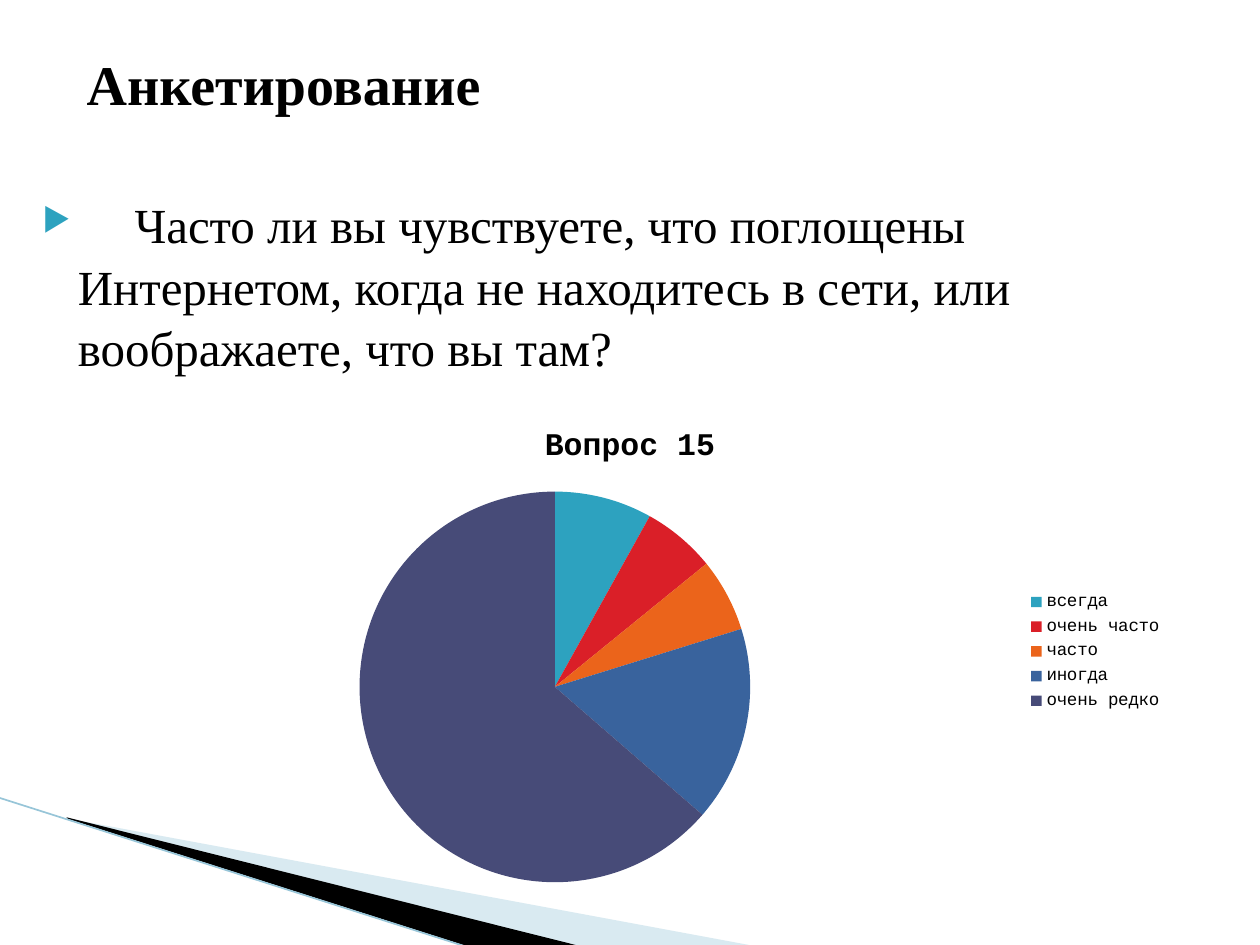
from dataclasses import dataclass

from lxml.etree import SubElement
from pptx import Presentation
from pptx.chart.data import CategoryChartData
from pptx.dml.color import RGBColor
from pptx.enum.chart import XL_CHART_TYPE as ChartType, XL_LEGEND_POSITION as LegendPosition
from pptx.enum.shapes import MSO_CONNECTOR as Connector
from pptx.enum.text import MSO_ANCHOR as Anchor
from pptx.oxml.ns import qn
from pptx.util import Pt

COLORS = {
    "text": "000000",
    "pale": "A0CBDC",
    "edge": "97C5D8",
    "teal": "2DA2BF",
    "red": "DA1F28",
    "orange": "EB641B",
    "blue": "39639D",
    "indigo": "474B78",
}
SERIF, MONO = "Times New Roman", "Courier New"


@dataclass
class Wedge:
    points: list[tuple[float, float]]
    color: str
    opacity: int = 100


@dataclass
class Slice:
    label: str
    value: int
    color: str


WEDGES = [
    Wedge([(39.6, 468.4), (428.4, 540.4), (328.3, 540.4), (39.6, 468)], "pale", 40),
    Wedge([(38.2, 467.3), (329, 540.4), (267.8, 541.4), (38.9, 468)], "text"),
]
SLICES = [
    Slice("всегда", 8, "teal"),
    Slice("очень часто", 6, "red"),
    Slice("часто", 6, "orange"),
    Slice("иногда", 16, "blue"),
    Slice("очень редко", 63, "indigo"),
]


def rgb(name: str) -> RGBColor:
    return RGBColor.from_string(COLORS[name])


def set_font(font, name: str, size: float, bold: bool = False) -> None:
    font.name, font.size, font.bold = name, Pt(size), bold
    font.color.rgb = rgb("text")


def draw_wedge(page, wedge: Wedge) -> None:
    start, *rest = wedge.points
    builder = page.shapes.build_freeform(*start, scale=Pt(1))
    builder.add_line_segments(rest, close=True)
    shape = builder.convert_to_shape()
    shape.shadow.inherit = False
    shape.line.fill.background()
    shape.fill.solid()
    shape.fill.fore_color.rgb = rgb(wedge.color)
    if wedge.opacity < 100:
        color = shape.fill._xPr.find(".//" + qn("a:srgbClr"))
        SubElement(color, qn("a:alpha"), val=str(wedge.opacity * 1000))


def draw_edge(page) -> None:
    edge = page.shapes.add_connector(Connector.STRAIGHT, Pt(-0.7), Pt(455.8), Pt(267.8), Pt(541.4))
    edge.line.color.rgb = rgb("edge")
    edge.line.width = Pt(0.95)
    SubElement(edge._element.spPr, qn("a:effectLst"))


def add_box(page, left: float, top: float, width: float, height: float):
    box = page.shapes.add_textbox(Pt(left), Pt(top), Pt(width), Pt(height))
    box.text_frame.word_wrap = True
    return box.text_frame


def add_bullet(para, left: float, hanging: float) -> None:
    properties = para._p.get_or_add_pPr()
    properties.set("marL", str(Pt(left)))
    properties.set("indent", str(Pt(-hanging)))
    color = SubElement(properties, qn("a:buClr"))
    SubElement(color, qn("a:srgbClr"), val=COLORS["teal"])
    SubElement(properties, qn("a:buSzPct"), val="68000")
    SubElement(properties, qn("a:buChar"), char="▶")


def draw_question(page) -> None:
    para = add_box(page, 8.6, 105.8, 689.8, 432.7).paragraphs[0]
    add_bullet(para, 28.8, 20.2)
    para.line_spacing = 1.05
    lead, question = para.add_run(), para.add_run()
    lead.text = "  "
    set_font(lead.font, MONO, 27)
    question.text = ("Часто ли вы чувствуете, что поглощены Интернетом, "
                     "когда не находитесь в сети, или воображаете, что вы там?")
    set_font(question.font, SERIF, 28)


def draw_title(page) -> None:
    frame = add_box(page, 42.5, 2.2, 588.2, 90)
    frame.vertical_anchor = Anchor.MIDDLE
    para = frame.paragraphs[0]
    para.text = "Анкетирование"
    set_font(para.font, SERIF, 32, bold=True)


def draw_chart(page, slices: list[Slice]) -> None:
    data = CategoryChartData()
    data.categories = [item.label for item in slices]
    data.add_series("Series 1", [item.value for item in slices])
    chart = page.shapes.add_chart(
        ChartType.PIE, Pt(48.2), Pt(230.4), Pt(623.5), Pt(283.7), data).chart
    set_font(chart.font, MONO, 10)

    chart.has_title = True
    para = chart.chart_title.text_frame.paragraphs[0]
    para.text = "Вопрос 15"
    set_font(para.font, MONO, 18, bold=True)
    chart.chart_title.include_in_layout = False

    chart.has_legend = True
    chart.legend.position = LegendPosition.RIGHT
    chart.legend.include_in_layout = False

    plot = chart.plots[0]
    plot.vary_by_categories = True
    for index, item in enumerate(slices):
        fill = plot.series[0].points[index].format.fill
        fill.solid()
        fill.fore_color.rgb = rgb(item.color)


def main() -> None:
    deck = Presentation()
    deck.slide_width, deck.slide_height = Pt(720), Pt(540)
    page = deck.slides.add_slide(deck.slide_layouts[6])

    # Corner decoration
    for wedge in WEDGES:
        draw_wedge(page, wedge)
    draw_edge(page)

    # Question, heading and answers
    draw_question(page)
    draw_title(page)
    draw_chart(page, SLICES)

    deck.save("out.pptx")


if __name__ == "__main__":
    main()
